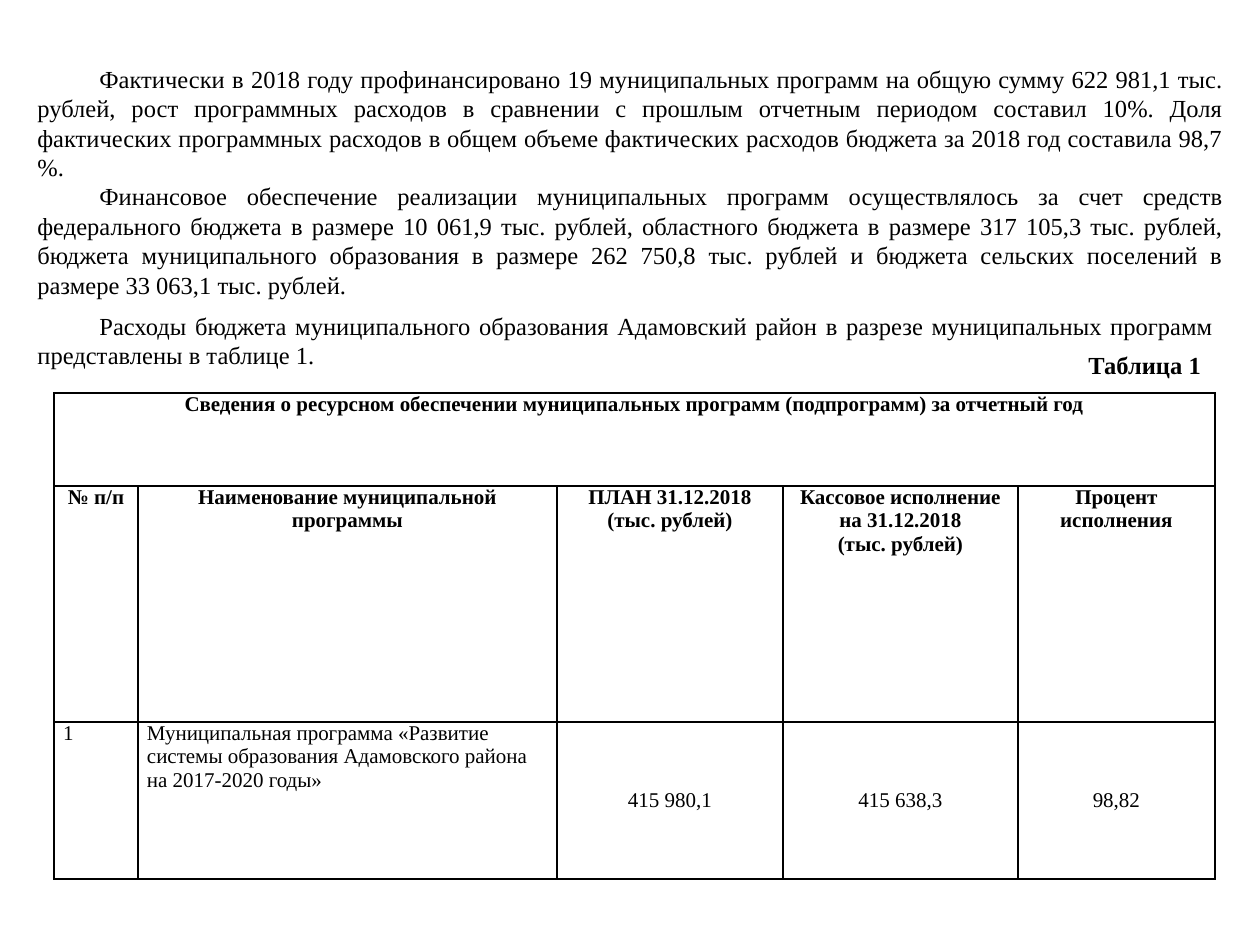
"""Build the slide on spending by municipal programme."""
import itertools

import lxml.etree
import pptx
import pptx.enum.text
import pptx.oxml.ns
import pptx.util
import pptx.dml.color

SCALE = 914400 / 126
FONT = "Times New Roman"
COLORS = {"text": "000000", "border": "000000"}
ALIGN = pptx.enum.text.PP_ALIGN
ANCHOR = pptx.enum.text.MSO_ANCHOR

SUMMARY = [
    "Фактически в 2018 году профинансировано 19 муниципальных программ на общую сумму "
    "622 981,1 тыс. рублей, рост программных расходов в сравнении с прошлым отчетным "
    "периодом составил 10%. Доля фактических программных расходов в общем объеме "
    "фактических расходов бюджета за 2018 год составила 98,7 %.",
    "Финансовое обеспечение реализации муниципальных программ осуществлялось за счет "
    "средств федерального бюджета в размере 10 061,9 тыс. рублей, областного бюджета в "
    "размере 317 105,3 тыс. рублей, бюджета муниципального образования в размере "
    "262 750,8 тыс. рублей и бюджета сельских поселений в размере 33 063,1 тыс. рублей.",
]
INTRO = [
    "Расходы бюджета муниципального образования Адамовский район в разрезе "
    "муниципальных программ представлены в таблице 1."
]
TITLE = "Сведения о ресурсном обеспечении муниципальных программ (подпрограмм) за отчетный год"
HEADERS = [
    ["№ п/п"],
    ["Наименование муниципальной программы"],
    ["ПЛАН 31.12.2018", "(тыс. рублей)"],
    ["Кассовое исполнение на 31.12.2018", "(тыс. рублей)"],
    ["Процент исполнения"],
]
PROGRAMME = [
    ["1"],
    ["Муниципальная программа «Развитие системы образования Адамовского района "
     "на 2017-2020 годы»"],
    ["415 980,1"],
    ["415 638,3"],
    ["98,82"],
]


def px(n):
    """Turn px into EMU."""
    return pptx.util.Emu(round(n * SCALE))


def write(tf, lines, size, align, bold=False, indent=0):
    """Fill a text frame with one paragraph per line."""
    for i, line in enumerate(lines):
        p = tf.paragraphs[0] if i == 0 else tf.add_paragraph()
        p.text = line
        p.alignment = align
        if indent:
            p._p.get_or_add_pPr().set("indent", str(px(indent)))
        p.font.name = FONT
        p.font.size = pptx.util.Pt(size)
        p.font.bold = bold
        p.font.color.rgb = pptx.dml.color.RGBColor.from_string(COLORS["text"])


def add_text(slide, box, lines, align=ALIGN.JUSTIFY, bold=False, indent=62,
             anchor=ANCHOR.MIDDLE, wrap=True):
    """Place a text box with the given lines."""
    tf = slide.shapes.add_textbox(*map(px, box)).text_frame
    tf.word_wrap = wrap
    tf.vertical_anchor = anchor
    write(tf, lines, 14, align, bold, indent)


def set_borders(cell):
    """Draw a thin line on all four sides of a cell."""
    tc_pr = cell._tc.get_or_add_tcPr()
    qn = pptx.oxml.ns.qn
    for side in ("a:lnL", "a:lnR", "a:lnT", "a:lnB"):
        ln = lxml.etree.SubElement(tc_pr, qn(side), w=str(pptx.util.Pt(1)))
        fill = lxml.etree.SubElement(ln, qn("a:solidFill"))
        lxml.etree.SubElement(fill, qn("a:srgbClr"), val=COLORS["border"])


def add_programme_table(slide, box, cols, rows):
    """Place the programme table with its merged title row."""
    table = slide.shapes.add_table(len(rows), len(cols), *map(px, box)).table
    table.first_row = table.horz_banding = False
    for column, width in zip(table.columns, cols):
        column.width = px(width)
    for row, height in zip(table.rows, rows):
        row.height = px(height)
    for r, c in itertools.product(range(len(rows)), range(len(cols))):
        cell = table.cell(r, c)
        cell.margin_left = cell.margin_right = px(9)
        cell.margin_top = cell.margin_bottom = 0
        set_borders(cell)
        cell.fill.background()
    table.cell(0, 0).merge(table.cell(0, len(cols) - 1))
    write(table.cell(0, 0).text_frame, [TITLE], 12, ALIGN.CENTER, True)
    for c, (header, value) in enumerate(zip(HEADERS, PROGRAMME)):
        write(table.cell(1, c).text_frame, header, 12, ALIGN.CENTER, True)
        cell = table.cell(2, c)
        is_amount = c > 1
        write(cell.text_frame, value, 12, ALIGN.CENTER if is_amount else ALIGN.LEFT)
        if is_amount:
            cell.vertical_anchor = ANCHOR.MIDDLE


def main():
    """Build and save the presentation."""
    prs = pptx.Presentation()
    prs.slide_width, prs.slide_height = px(1260), px(945)
    slide = prs.slides.add_slide(prs.slide_layouts[6])
    add_text(slide, (25, 304, 1201, 72), INTRO)
    add_programme_table(slide, (54, 393, 1161, 486), (84, 419, 226, 235, 197), (93, 236, 157))
    add_text(slide, (1076, 344, 139, 43), ["Таблица 1"], ALIGN.LEFT, True, 0, ANCHOR.TOP, False)
    add_text(slide, (25, 56, 1211, 251), SUMMARY)
    prs.save("out.pptx")


if __name__ == "__main__":
    main()
